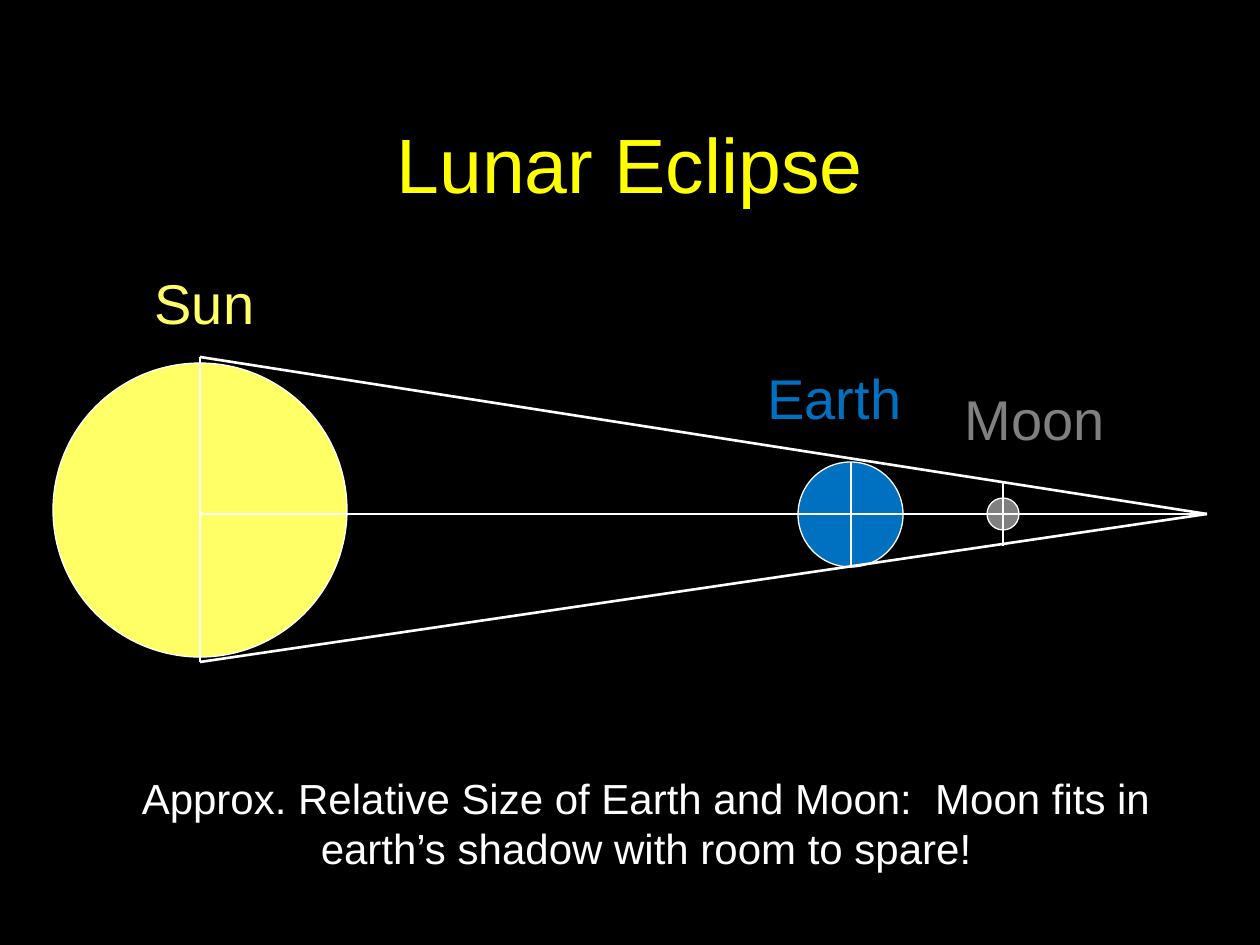
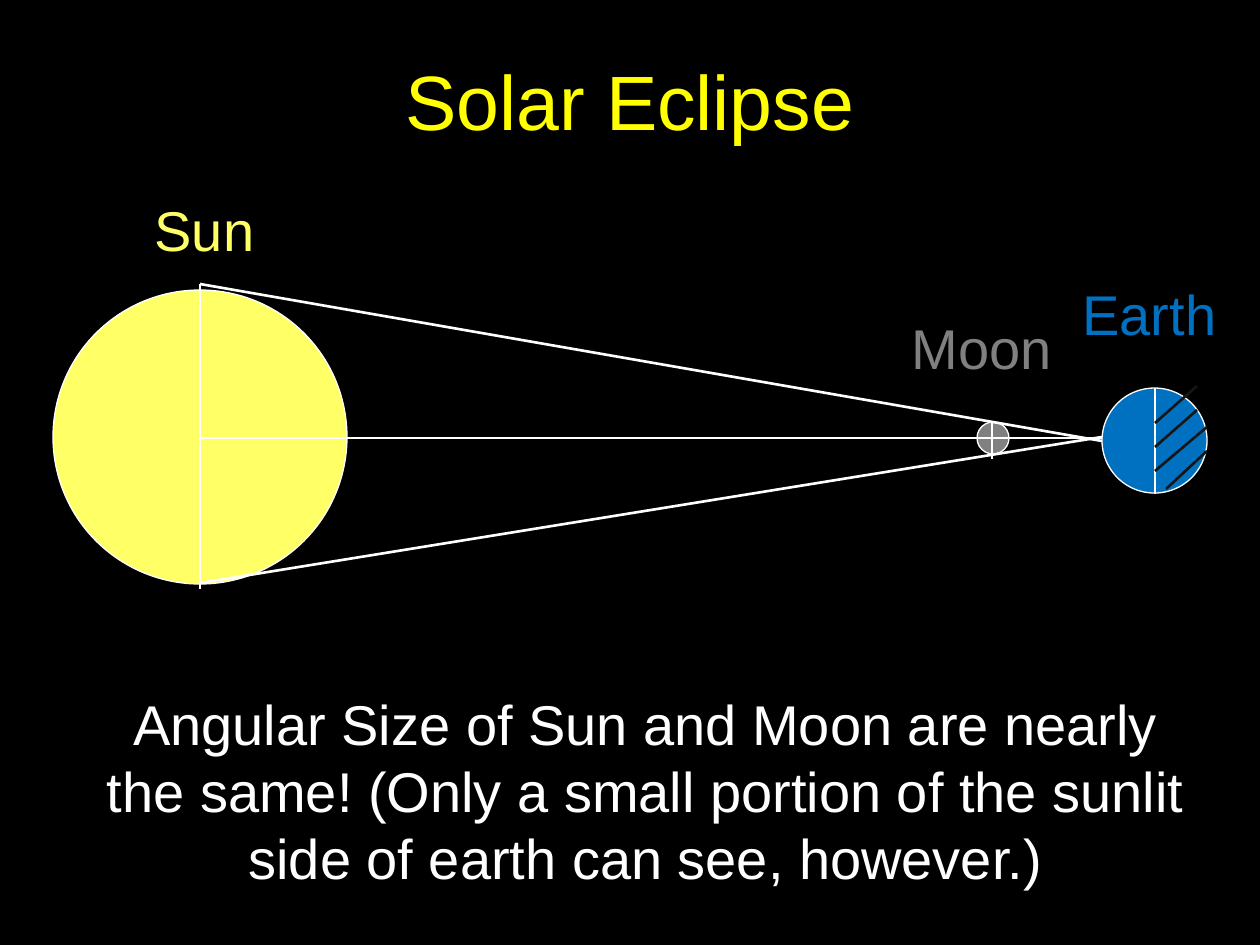
import pptx
import pptx.dml.color
import pptx.enum.shapes
import pptx.enum.text
import pptx.oxml.ns
import pptx.util
from lxml import etree

SCALE = 914400 / 126
FONT = "Arial"
BLACK, WHITE, TITLE_YELLOW = "000000", "FFFFFF", "FFFF00"
SUN, EARTH, MOON, NIGHT = "FFFF66", "0070C0", "808080", "161616"
LABEL_HEIGHT = 81
SUN_X = 158


def px(length):
    """Turn px into EMU."""
    return pptx.util.Emu(round(length * SCALE))


def colour(value):
    """Turn a hex string into a colour."""
    return pptx.dml.color.RGBColor.from_string(value)


def place(item, box):
    """Move an item to a box of left, top, width and height."""
    item.left, item.top, item.width, item.height = map(px, box)


def write(item, text, size=32, ink=WHITE, anchor=pptx.enum.text.MSO_ANCHOR.TOP):
    """Write one centred paragraph into an item."""
    frame = item.text_frame
    frame.word_wrap = True
    frame.vertical_anchor = anchor
    para = frame.paragraphs[0]
    para.alignment = pptx.enum.text.PP_ALIGN.CENTER
    span = para.add_run()
    span.text = text
    span.font.name = FONT
    span.font.size = pptx.util.Pt(size)
    span.font.color.rgb = colour(ink)


def add_text(page, text, box, **style):
    """Add a text box with formatted text."""
    write(page.shapes.add_textbox(*map(px, box)), text, **style)


def add_line(page, origin, ends, ink=WHITE):
    """Add a line whose two ends are relative to an origin."""
    left, top = origin
    x1, y1, x2, y2 = ends
    line = page.shapes.add_connector(
        pptx.enum.shapes.MSO_CONNECTOR.STRAIGHT,
        px(left + x1), px(top + y1), px(left + x2), px(top + y2))
    line.line.color.rgb = colour(ink)
    line.line.width = pptx.util.Pt(1.5)
    etree.SubElement(line._element.spPr, pptx.oxml.ns.qn("a:effectLst"))


def add_body(page, origin, disc, name, label, ink, diameter_line):
    """Add a disc, its label and the line across it."""
    left, top = origin
    x, y, size = disc
    ball = page.shapes.add_shape(
        pptx.enum.shapes.MSO_SHAPE.OVAL, px(left + x), px(top + y), px(size), px(size))
    ball.shadow.inherit = False
    ball.fill.solid()
    ball.fill.fore_color.rgb = colour(ink)
    ball.line.color.rgb = colour(WHITE)
    ball.line.width = pptx.util.Pt(0.75)
    label_x, label_y, label_width = label
    add_text(page, name, (left + label_x, top + label_y, label_width, LABEL_HEIGHT), ink=ink)
    line_x, start, end = diameter_line
    add_line(page, origin, (line_x, start, line_x, end))


def add_diagram(page, origin, earth, moon, rays):
    """Draw the sun, the earth, the moon and the rays from the sun."""
    add_body(page, origin, name="Earth", ink=EARTH, **earth)
    add_body(page, origin, name="Moon", ink=MOON, **moon)
    add_body(page, origin, (11, 101, 294), "Sun", (0, 0, 325), SUN, (SUN_X, 95, 400))
    for start_y, end_x, end_y in rays:
        add_line(page, origin, (SUN_X, start_y, end_x, end_y))


def add_night_hatching(page, origin):
    """Hatch the dark half of an earth disc."""
    for ends in ((95, -2, 53, 35), (95, 22, 53, 59), (105, 39, 53, 83), (105, 63, 64, 101)):
        add_line(page, origin, ends, ink=NIGHT)


def add_page(deck, title, title_top):
    """Add a page with its title."""
    page = deck.slides.add_slide(deck.slide_layouts[5])
    place(page.shapes.title, (94, title_top, 1072, 158))
    write(page.shapes.title, title, size=44, ink=TITLE_YELLOW,
          anchor=pptx.enum.text.MSO_ANCHOR.MIDDLE)
    return page


def add_lunar_page(deck):
    """Show the moon inside the shadow of the earth."""
    page = add_page(deck, "Lunar Eclipse", 84)
    add_diagram(
        page, (42, 262),
        earth=dict(disc=(756, 200, 105), label=(630, 95, 325), diameter_line=(809, 200, 305)),
        moon=dict(disc=(945, 236, 32), label=(872, 116, 242), diameter_line=(961, 221, 284)),
        rays=((95, 1165, 252), (252, 1165, 252), (400, 1165, 252)))
    add_text(page, "Approx. Relative Size of Earth and Moon:  Moon fits in "
             "earth’s shadow with room to spare!", (126, 766, 1040, 115), size=24)


def add_solar_page(deck):
    """Show the moon between the sun and the earth."""
    page = add_page(deck, "Solar Eclipse", 21)
    left, top = 42, 189
    earth_x, earth_y = 1060, 199
    add_diagram(
        page, (left, top),
        earth=dict(disc=(earth_x, earth_y, 105), label=(945, 84, 325),
                   diameter_line=(1113, 199, 305)),
        moon=dict(disc=(935, 233, 32), label=(819, 118, 242), diameter_line=(950, 232, 270)),
        rays=((95, earth_x, 252), (249, earth_x, 249), (394, earth_x, 248)))
    add_night_hatching(page, (left + earth_x, top + earth_y))
    add_text(page, "Angular Size of Sun and Moon are nearly the same! (Only a small "
             "portion of the sunlit side of earth can see, however.)", (84, 683, 1124, 217))


def main():
    """Build and save the deck."""
    deck = pptx.Presentation()
    deck.slide_width, deck.slide_height = px(1260), px(945)
    backdrop = deck.slide_master.background.fill
    backdrop.solid()
    backdrop.fore_color.rgb = colour(BLACK)
    add_lunar_page(deck)
    add_solar_page(deck)
    deck.save("out.pptx")


if __name__ == "__main__":
    main()
